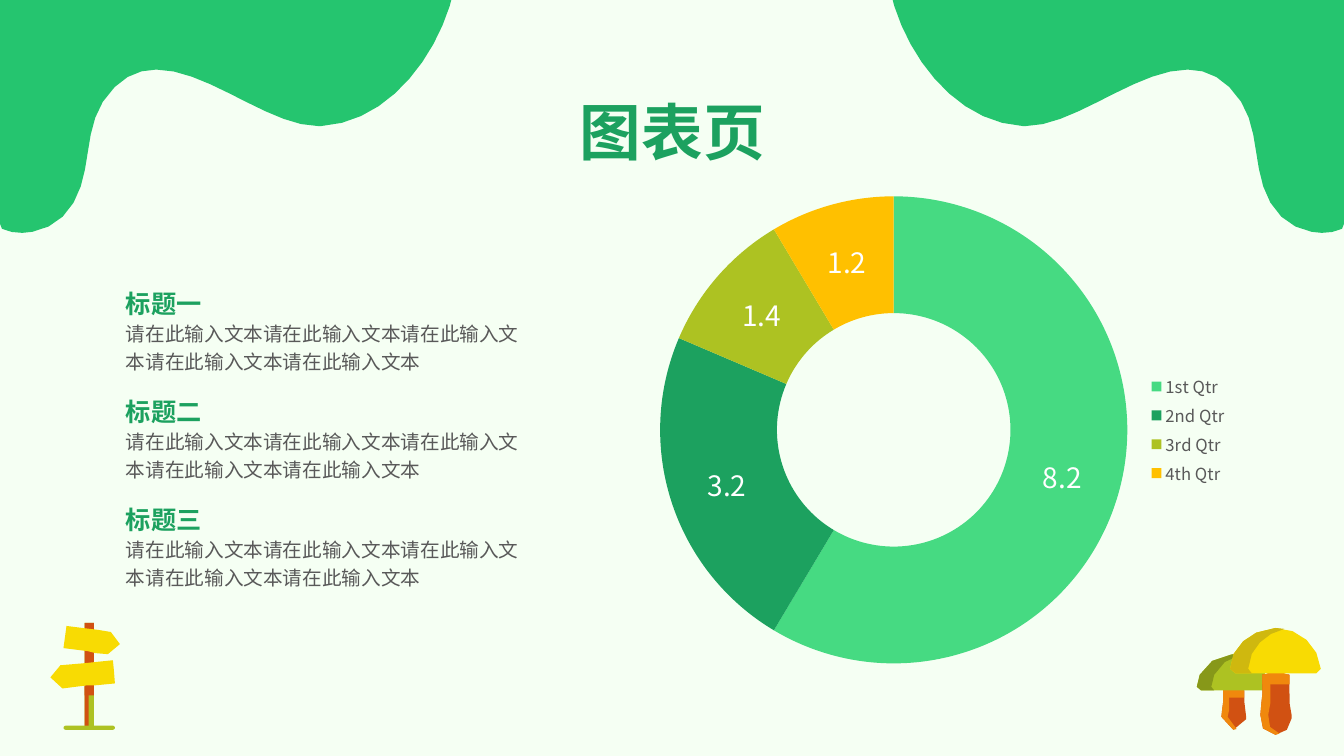
import math

import pptx
import pptx.chart.data
import pptx.dml.color
import pptx.enum.chart
import pptx.enum.shapes
import pptx.enum.text
import pptx.oxml
import pptx.oxml.ns
import pptx.util

SLIDE_W, SLIDE_H = 13.33, 7.5
FONT = "Noto Sans CJK JP"
COLOURS = {
    "background": "F5FFF3", "hill": "25C56F", "heading": "1CA15F", "body": "595959",
    "mint": "46DA82", "olive": "ADC222", "moss": "879819", "amber": "FFC000",
    "yellow": "F8DB03", "mustard": "CFB80F", "orange": "F0880D", "rust": "D15112",
    "label": "FFFFFF",
}
BODY = "请在此输入文本" * 5

# Outlines: a pair is a corner, six numbers are a Bezier curve
HILL = [
    (0.22, 2.31), (0.15, 2.31, 0.08, 2.3, 0.02, 2.27), (0.01, 2.26, 0, 2.24, 0, 2.22),
    (0, -2.31), (0, -2.35, 0.03, -2.38, 0.08, -2.38),
    (3.18, -2.38), (4.06, -2.02, 4.72, -1.13, 4.51, -0.13),
    (4.38, 0.5, 3.88, 1.21, 3.19, 1.25), (3.15, 1.25),
    (2.67, 1.25, 2.06, 0.69, 1.55, 0.69), (1.35, 0.69, 1.17, 0.78, 1.02, 1.01),
    (0.83, 1.31, 0.91, 1.7, 0.73, 2.01), (0.64, 2.17, 0.49, 2.27, 0.32, 2.3),
    (0.28, 2.31, 0.25, 2.31, 0.22, 2.31),
]
CAP_LEFT = [
    (0.5, 0), (0.46, 0.02), (0.28, 0.04, 0.12, 0.26, 0.04, 0.57),
    (0.02, 0.68, 0.01, 0.79, 0, 0.9), (0, 0.95, 0.02, 1, 0.06, 1),
]
CAP = CAP_LEFT + [(0.95, 1), (0.99, 1, 1, 0.95, 1, 0.9), (0.98, 0.4, 0.77, 0, 0.5, 0)]
CAP_SHADE = CAP_LEFT + [
    (0.24, 1), (0.21, 1, 0.19, 0.95, 0.2, 0.9), (0.2, 0.79, 0.21, 0.68, 0.24, 0.57),
    (0.31, 0.29, 0.44, 0.09, 0.6, 0.02),
]
STEM_LEFT = [
    (0.15, 0), (0.15, 0.32), (0.15, 0.37, 0.15, 0.43, 0.12, 0.48),
    (0.12, 0.55, 0.09, 0.62, 0.09, 0.67), (0, 0.83, 0.24, 1, 0.53, 1),
]
STEM = STEM_LEFT + [
    (0.79, 1, 1, 0.87, 1, 0.73), (1, 0.67), (0.94, 0.55, 0.94, 0.43, 0.94, 0.32), (0.94, 0),
]
STEM_SHADE = STEM_LEFT + [
    (0.65, 0.98), (0.41, 0.95, 0.26, 0.82, 0.32, 0.67),
    (0.35, 0.62, 0.35, 0.55, 0.38, 0.48), (0.38, 0.32), (0.38, 0),
]
COLLAR = [(0.5, 0), (0, 0.35), (0, 1), (1, 1), (1, 0.35)]
RIGHT_BOARD = [(0.16, 0.03), (0.13, 0.25), (0.37, 0.28), (0.45, 0.3), (0.57, 0.31),
               (0.69, 0.21), (0.6, 0.09), (0.48, 0.07)]
LEFT_BOARD = [(0.62, 0.37), (0.33, 0.4), (0.1, 0.42), (0, 0.54), (0.12, 0.65),
              (0.36, 0.62), (0.44, 0.62), (0.64, 0.6), (0.63, 0.47)]


def rgb(key):
    return pptx.dml.color.RGBColor.from_string(COLOURS[key])


def inches(*lengths):
    return [pptx.util.Inches(length) for length in lengths]


def paint(shape, colour):
    shape.fill.solid()
    shape.fill.fore_color.rgb = rgb(colour)
    shape.line.fill.background()
    shape.shadow.inherit = False


def trace(outline, box):
    """Points in inches; a longer curve gets more of them."""
    left, top, width, height = box
    points = []
    for part in outline:
        corners = [(left + x * width, top + y * height)
                   for x, y in zip(part[::2], part[1::2])]
        if len(corners) == 1:
            points += corners
            continue
        controls = [points[-1]] + corners
        steps = min(10, 1 + int(5 * math.dist(controls[0], controls[-1])))
        for step in range(1, steps + 1):
            t = step / steps
            weights = ((1 - t) ** 3, 3 * t * (1 - t) ** 2, 3 * t * t * (1 - t), t ** 3)
            points.append(tuple(sum(w * c[axis] for w, c in zip(weights, controls))
                                for axis in (0, 1)))
    return points


def draw_outline(shapes, box, outline, colour):
    points = [inches(*point) for point in trace(outline, box)]
    builder = shapes.build_freeform(*points[0], scale=1.0)
    builder.add_line_segments(points[1:], close=True)
    paint(builder.convert_to_shape(), colour)


def add_run(paragraph, text, size, colour, bold=False):
    run = paragraph.add_run()
    run.text = text
    run.font.size = pptx.util.Pt(size)
    run.font.name = FONT
    run.font.bold = bold
    run.font.color.rgb = rgb(colour)
    run._r.get_or_add_rPr().append(pptx.oxml.parse_xml(
        f'<a:ea {pptx.oxml.ns.nsdecls("a")} typeface="{FONT}"/>'))


def set_insets(frame, inset):
    frame.margin_left = frame.margin_right = pptx.util.Inches(inset)
    frame.margin_top = frame.margin_bottom = pptx.util.Inches(inset)


def add_title(slide, box, text):
    title = slide.shapes.title
    title.left, title.top, title.width, title.height = inches(*box)
    frame = title.text_frame
    set_insets(frame, 0.1)
    frame.word_wrap = True
    frame.auto_size = pptx.enum.text.MSO_AUTO_SIZE.NONE
    frame.vertical_anchor = pptx.enum.text.MSO_ANCHOR.MIDDLE
    frame.paragraphs[0].alignment = pptx.enum.text.PP_ALIGN.CENTER
    add_run(frame.paragraphs[0], text, 44, "heading", True)


def add_sections(slide, box, headings):
    left, top, width, height = box
    pitch = height / len(headings)
    group = slide.shapes.add_group_shape()
    for row, heading in enumerate(headings):
        y = top + row * pitch
        body = group.shapes.add_textbox(*inches(left, y + 0.3, width, 0.64)).text_frame
        body.word_wrap = True
        set_insets(body, 0.1)
        body.paragraphs[0].line_spacing = 1.2
        body.paragraphs[0].space_after = pptx.util.Pt(10)
        add_run(body.paragraphs[0], BODY, 14, "body")

        head = group.shapes.add_textbox(*inches(left, y, 0.95, 0.44)).text_frame
        head.word_wrap = False
        head.auto_size = pptx.enum.text.MSO_AUTO_SIZE.SHAPE_TO_FIT_TEXT
        head.paragraphs[0].line_spacing = 1.2
        add_run(head.paragraphs[0], heading, 18, "heading", True)


def add_signpost(slide, left, top):
    shapes = slide.shapes.add_group_shape().shapes
    kinds = pptx.enum.shapes.MSO_SHAPE
    # Post and its shaded stretches, then the boards and the ground
    for y, width, height, colour in [
            (0, 0.09, 1.04, "olive"), (0.63, 0.04, 0.41, "rust"), (0.57, 0.09, 0.15, "rust"),
            (0, 0.09, 0.07, "rust"), (0.22, 0.09, 0.25, "rust")]:
        paint(shapes.add_shape(kinds.RECTANGLE, *inches(left + 0.34, top + y, width, height)),
              colour)
    for board in (RIGHT_BOARD, LEFT_BOARD):
        draw_outline(shapes, (left, top, 1, 1), board, "yellow")
    ground = shapes.add_shape(kinds.ROUNDED_RECTANGLE,
                              *inches(left + 0.13, top + 1.02, 0.51, 0.04))
    ground.adjustments[0] = 0.5
    paint(ground, "olive")


def add_mushroom(shapes, cap, stem, collar, cap_colour, shade_colour):
    for box, outline, colour in [
            (stem, STEM, "rust"), (stem, STEM_SHADE, "orange"), (collar, COLLAR, "orange"),
            (cap, CAP, cap_colour), (cap, CAP_SHADE, shade_colour)]:
        draw_outline(shapes, box, outline, colour)


def place_layout(parent, index, box, target=""):
    for old in parent.findall(pptx.oxml.ns.qn("c:layout")):
        parent.remove(old)
    shares = "".join(f'<c:{name} val="{share}"/>' for name, share in zip("xywh", box))
    parent.insert(index, pptx.oxml.parse_xml(
        f'<c:layout {pptx.oxml.ns.nsdecls("c")}><c:manualLayout>{target}'
        f'<c:xMode val="edge"/><c:yMode val="edge"/>{shares}</c:manualLayout></c:layout>'))


def add_quarter_chart(slide, box):
    quarters = pptx.chart.data.CategoryChartData()
    quarters.categories = ["1st Qtr", "2nd Qtr", "3rd Qtr", "4th Qtr"]
    quarters.add_series("Series 1", (8.2, 3.2, 1.4, 1.2))
    chart = slide.shapes.add_chart(
        pptx.enum.chart.XL_CHART_TYPE.DOUGHNUT, *inches(*box), quarters).chart
    chart.has_title = False
    chart.font.name, chart.font.size = FONT, pptx.util.Pt(10)
    chart.has_legend = True
    chart.legend.position = pptx.enum.chart.XL_LEGEND_POSITION.RIGHT
    chart.legend.include_in_layout = False
    plot = chart.plots[0]
    plot.vary_by_categories = True
    for index, colour in enumerate(("mint", "heading", "olive", "amber")):
        fill = plot.series[0].points[index].format.fill
        fill.solid()
        fill.fore_color.rgb = rgb(colour)
    labels = plot.series[0].data_labels
    labels.show_value = True
    labels.show_percentage = False
    for font, size, colour in ((chart.legend.font, 11.9, "body"), (labels.font, 20, "label")):
        font.name, font.size = FONT, pptx.util.Pt(size)
        font.color.rgb = rgb(colour)
    plot_area, legend = chart.element.xpath("//c:plotArea | //c:legend")
    place_layout(plot_area, 0, (0.12, 0.03, 0.63, 0.94), '<c:layoutTarget val="inner"/>')
    place_layout(legend, 1, (0.77, 0.38, 0.12, 0.24))


def main():
    deck = pptx.Presentation()
    deck.slide_width, deck.slide_height = inches(SLIDE_W, SLIDE_H)
    slide = deck.slides.add_slide(deck.slide_layouts[5])
    slide.background.fill.solid()
    slide.background.fill.fore_color.rgb = rgb("background")
    # Mirrored hills in the top corners
    for box in ((SLIDE_W, 0, -1, 1), (0, 0, 1, 1)):
        draw_outline(slide.shapes, box, HILL, "hill")
    add_title(slide, (4.31, 0.84, 4.72, 0.92), "图表页")
    add_signpost(slide, 0.5, 6.18)
    # Small mushroom behind the large one
    mushrooms = slide.shapes.add_group_shape().shapes
    add_mushroom(mushrooms, (11.87, 6.49, 0.72, 0.36), (12.09, 6.85, 0.27, 0.39),
                 (12.13, 6.8, 0.21, 0.12), "olive", "moss")
    add_mushroom(mushrooms, (12.2, 6.23, 0.9, 0.45), (12.47, 6.69, 0.34, 0.6),
                 (12.52, 6.65, 0.27, 0.14), "yellow", "mustard")
    add_sections(slide, (1.15, 2.75, 4.2, 3.21), ["标题一", "标题二", "标题三"])
    add_quarter_chart(slide, (5.65, 1.8, 7.39, 4.93))
    deck.save("out.pptx")


if __name__ == "__main__":
    main()
